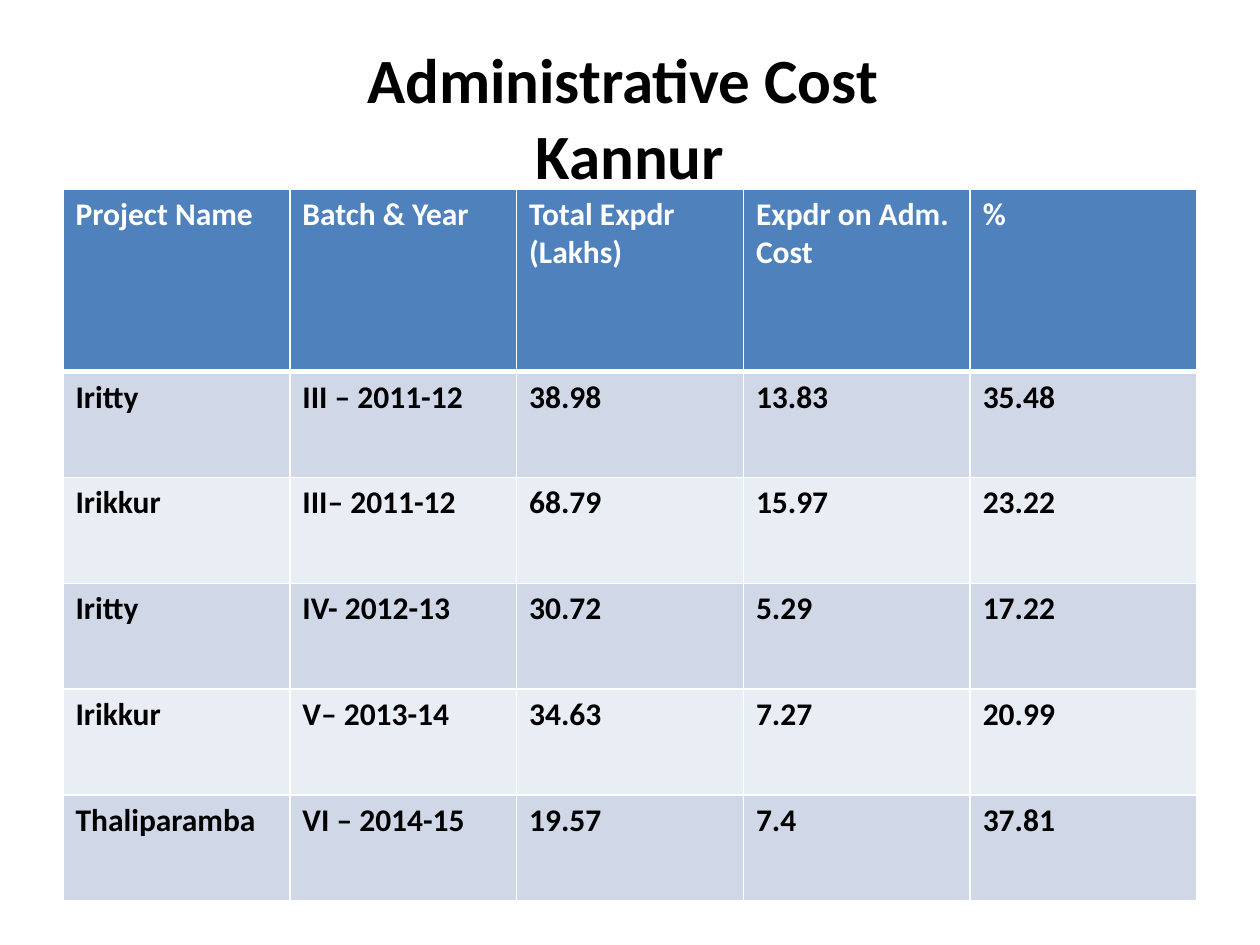
"""Build the Kannur administrative cost slide with its table of projects."""
from dataclasses import astuple, dataclass

from lxml.etree import SubElement
from pptx import Presentation
from pptx.dml.color import RGBColor
from pptx.enum.text import MSO_ANCHOR as Anchor, PP_ALIGN as Align
from pptx.oxml.ns import qn
from pptx.util import Inches, Pt

FONT = "Calibri"
BLACK, WHITE, HEADER_BLUE = "000000", "FFFFFF", "4F81BD"
BANDS = ("D0D8E8", "E9EDF4")
COLUMN_WIDTH, HEADER_HEIGHT, ROW_HEIGHT = 1.8, 1.45, 0.84
THIN, THICK = 1, 3


@dataclass
class Project:
    name: str
    batch: str
    total: str
    admin: str
    percent: str


HEADINGS = Project("Project Name", "Batch & Year", "Total Expdr (Lakhs)",
                   "Expdr on Adm. Cost", "%")
PROJECTS = [
    Project("Iritty", "III – 2011-12", "38.98", "13.83", "35.48"),
    Project("Irikkur", "III– 2011-12", "68.79", "15.97", "23.22"),
    Project("Iritty", "IV- 2012-13", "30.72", "5.29", "17.22"),
    Project("Irikkur", "V– 2013-14", "34.63", "7.27", "20.99"),
    Project("Thaliparamba", "VI – 2014-15", "19.57", "7.4", "37.81"),
]


def color(value: str) -> RGBColor:
    return RGBColor.from_string(value)


def add_run(paragraph, text: str, size: float, ink: str) -> None:
    run = paragraph.add_run()
    run.text = text
    run.font.name = FONT
    run.font.size = Pt(size)
    run.font.bold = True
    run.font.color.rgb = color(ink)


def add_border(cell, side: str, width: float) -> None:
    properties = cell._tc.get_or_add_tcPr()
    border = SubElement(properties, qn(f"a:ln{side}"), w=str(Pt(width)))
    fill = SubElement(border, qn("a:solidFill"))
    SubElement(fill, qn("a:srgbClr"), val=WHITE)


def add_title(slide) -> None:
    title = slide.shapes.add_textbox(Inches(0.5), Inches(0.3), Inches(9), Inches(1.25))
    frame = title.text_frame
    frame.word_wrap = True
    frame.vertical_anchor = Anchor.MIDDLE
    heading = frame.paragraphs[0]
    heading.alignment = Align.CENTER
    add_run(heading, "Administrative Cost ", 36, BLACK)
    heading.add_line_break()
    add_run(heading, "Kannur", 36, BLACK)


def fill_row(table, index: int, project: Project) -> None:
    is_header = index == 0
    table.rows[index].height = Inches(HEADER_HEIGHT if is_header else ROW_HEIGHT)
    background = HEADER_BLUE if is_header else BANDS[(index - 1) % 2]
    borders = {"L": THIN, "R": THIN,
               "T": THICK if index == 1 else THIN,
               "B": THICK if is_header else THIN}
    for cell, text in zip(table.rows[index].cells, astuple(project)):
        for side, width in borders.items():
            add_border(cell, side, width)
        cell.fill.solid()
        cell.fill.fore_color.rgb = color(background)
        add_run(cell.text_frame.paragraphs[0], text, 18, WHITE if is_header else BLACK)


def add_cost_table(slide) -> None:
    entries = [HEADINGS, *PROJECTS]
    columns = len(astuple(HEADINGS))
    height = HEADER_HEIGHT + ROW_HEIGHT * len(PROJECTS)
    table = slide.shapes.add_table(len(entries), columns, Inches(0.5), Inches(1.5),
                                   Inches(COLUMN_WIDTH * columns), Inches(height)).table
    for column in table.columns:
        column.width = Inches(COLUMN_WIDTH)
    for index, project in enumerate(entries):
        fill_row(table, index, project)


def main() -> None:
    deck = Presentation()
    deck.slide_width, deck.slide_height = Inches(10), Inches(7.5)
    slide = deck.slides.add_slide(deck.slide_layouts[6])
    add_title(slide)
    add_cost_table(slide)
    deck.save("out.pptx")


if __name__ == "__main__":
    main()
